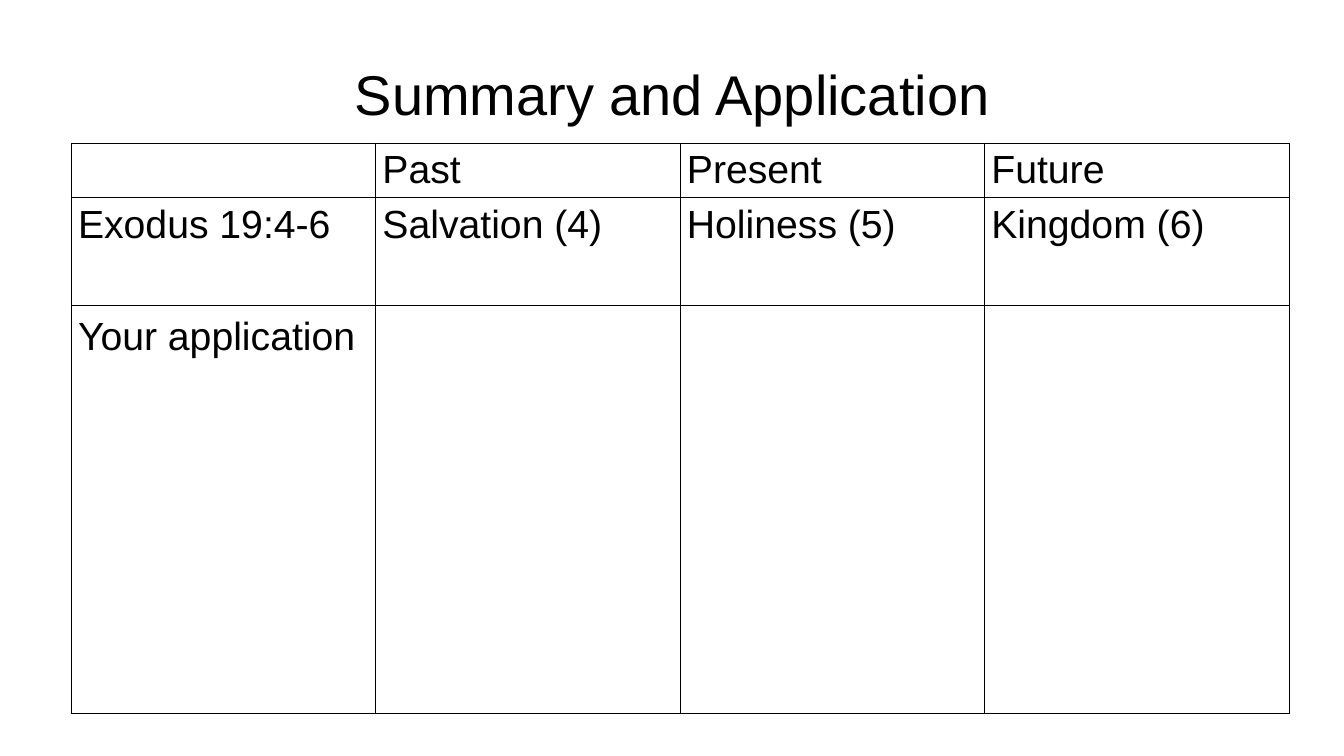
import pptx
import pptx.util
import pptx.dml.color
import pptx.enum.text
import pptx.oxml
import pptx.oxml.ns

Pt = pptx.util.Pt
PP_ALIGN = pptx.enum.text.PP_ALIGN
ANCHOR = pptx.enum.text.MSO_ANCHOR

COLORS = {"text": "000000", "border": "000000"}
FONT = "Arial"
COL_WIDTH = 217.5
ROW_HEIGHTS = [36.4, 77.1, 291.4]
TOP_MARGINS = [1.5, 1.5, 5]
ROWS = [
    ["", "Past", "Present", "Future"],
    ["Exodus 19:4-6", "Salvation (4)", "Holiness (5)", "Kingdom (6)"],
    ["Your application", "", "", ""],
]


def format_paragraph(p, size, align):
    p.alignment = align
    for r in p.runs:
        r.font.name = FONT
        r.font.size = Pt(size)
        r.font.bold = False
        r.font.color.rgb = pptx.dml.color.RGBColor.from_string(COLORS["text"])


def add_title(slide, text):
    sp = slide.shapes.add_textbox(Pt(48), Pt(21.6), Pt(864), Pt(90))
    tf = sp.text_frame
    tf.word_wrap = True
    tf.vertical_anchor = ANCHOR.MIDDLE
    tf.text = text
    format_paragraph(tf.paragraphs[0], 40, PP_ALIGN.CENTER)


def set_borders(cell):
    tc_pr = cell._tc.get_or_add_tcPr()
    for i, side in enumerate(["lnL", "lnR", "lnT", "lnB"]):
        ln = pptx.oxml.parse_xml(
            f'<a:{side} {pptx.oxml.ns.nsdecls("a")} w="{Pt(0.28)}"><a:solidFill>'
            f'<a:srgbClr val="{COLORS["border"]}"/></a:solidFill></a:{side}>')
        tc_pr.insert(i, ln)


def fill_cell(cell, text, top_margin):
    cell.fill.background()
    set_borders(cell)
    cell.margin_left = cell.margin_right = Pt(5)
    cell.margin_top, cell.margin_bottom = Pt(top_margin), Pt(1.5)
    cell.vertical_anchor = ANCHOR.TOP
    cell.text_frame.text = text
    p = cell.text_frame.paragraphs[0]
    p.line_spacing = 1.07
    format_paragraph(p, 28, PP_ALIGN.JUSTIFY)


def add_summary_table(slide):
    n_cols = len(ROWS[0])
    table = slide.shapes.add_table(
        len(ROWS), n_cols, Pt(50.75), Pt(102.2),
        Pt(COL_WIDTH * n_cols), Pt(sum(ROW_HEIGHTS))).table
    table.first_row = table.horz_banding = False
    for column in table.columns:
        column.width = Pt(COL_WIDTH)
    for i, texts in enumerate(ROWS):
        table.rows[i].height = Pt(ROW_HEIGHTS[i])
        for j, text in enumerate(texts):
            fill_cell(table.cell(i, j), text, TOP_MARGINS[i])


def main():
    prs = pptx.Presentation()
    prs.slide_width, prs.slide_height = Pt(960), Pt(540)
    s = prs.slides.add_slide(prs.slide_layouts[6])

    # Heading
    add_title(s, "Summary and Application")

    # Past, present and future grid
    add_summary_table(s)

    prs.save("out.pptx")


if __name__ == "__main__":
    main()
